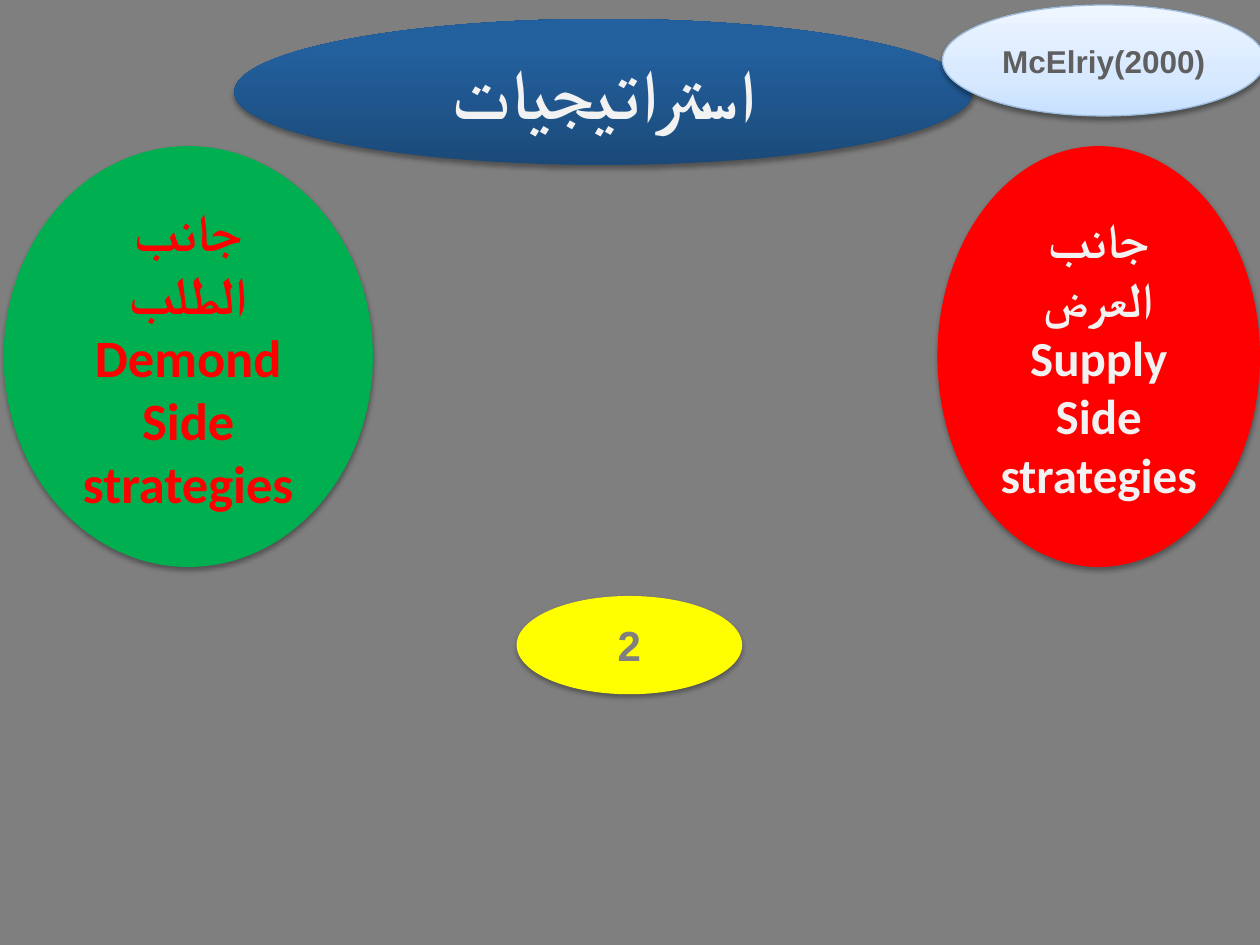
import copy
import dataclasses

import lxml.etree
import pptx
import pptx.dml.color
import pptx.enum.shapes
import pptx.enum.text
import pptx.oxml.ns
import pptx.util

Inches = pptx.util.Inches
Pt = pptx.util.Pt
qn = pptx.oxml.ns.qn


def rgb(value):
    return pptx.dml.color.RGBColor.from_string(value)


@dataclasses.dataclass(frozen=True)
class Theme:
    background: str = "7F7F7F"
    light: str = "F2F2F2"
    supply: str = "FF0000"
    demand: str = "00B050"
    number: str = "FFFF00"
    citation_text: str = "5F5F5F"
    citation_line: str = "9DBCDC"
    title_gradient: tuple = ((0, "1B4A79"), (0.8, "23609E"), (1, "2160A1"))
    citation_gradient: tuple = ((0, "C8E1FF"), (0.35, "D7E9FF"), (1, "EFF6FF"))
    main_font: str = "Arial"
    latin_font: str = "Calibri"
    title_size: int = 40
    demand_size: int = 30
    supply_size: int = 28
    number_size: int = 24
    citation_size: int = 18


class SlideBuilder:
    def __init__(self, presentation, theme):
        self.theme = theme
        self.slide = presentation.slides.add_slide(presentation.slide_layouts[5])
        self.slide.background.fill.solid()
        self.slide.background.fill.fore_color.rgb = rgb(theme.background)

    def ellipse(self, box, fill, line=None, shadow_alpha=35):
        """Add a shadowed ellipse; fill is one colour or a tuple of gradient stops."""
        oval = self.slide.shapes.add_shape(
            pptx.enum.shapes.MSO_SHAPE.OVAL, *map(Inches, box))
        if isinstance(fill, str):
            oval.fill.solid()
            oval.fill.fore_color.rgb = rgb(fill)
        else:
            self.gradient(oval, fill)
        if line:
            oval.line.color.rgb = rgb(line)
            oval.line.width = Pt(0.75)
        else:
            oval.line.fill.background()
        self.shadow(oval, shadow_alpha)
        return oval

    def gradient(self, oval, stops):
        """Fill from bottom to top with any number of stops."""
        oval.fill.gradient()
        oval.fill.gradient_angle = 90
        stop_list = oval.element.spPr.find(".//" + qn("a:gsLst"))
        while len(stop_list) < len(stops):
            stop_list.append(copy.deepcopy(stop_list[0]))
        for stop, (position, color) in zip(oval.fill.gradient_stops, stops):
            stop.position = position
            stop.color.rgb = rgb(color)

    def shadow(self, oval, alpha):
        oval.shadow.inherit = False
        effects = oval.element.spPr.find(qn("a:effectLst"))
        outer = lxml.etree.SubElement(
            effects, qn("a:outerShdw"), blurRad=str(Pt(3.1)), dist=str(Pt(1.8)),
            dir="5400000", rotWithShape="0")
        color = lxml.etree.SubElement(outer, qn("a:srgbClr"), val="000000")
        lxml.etree.SubElement(color, qn("a:alpha"), val=str(alpha * 1000))

    def text(self, shape, lines, size, color):
        """Write centred bold paragraphs from (words, font name) pairs."""
        frame = shape.text_frame
        frame.word_wrap = True
        frame.auto_size = pptx.enum.text.MSO_AUTO_SIZE.NONE
        frame.vertical_anchor = pptx.enum.text.MSO_ANCHOR.MIDDLE
        frame.text = "\n".join(words for words, _ in lines)
        for paragraph, (_, font_name) in zip(frame.paragraphs, lines):
            paragraph.alignment = pptx.enum.text.PP_ALIGN.CENTER
            paragraph.font.name = font_name
            paragraph.font.size = Pt(size)
            paragraph.font.bold = True
            paragraph.font.color.rgb = rgb(color)

    def title(self, words, box):
        """Set the title placeholder on top of a gradient ellipse."""
        self.ellipse(box, self.theme.title_gradient)
        heading = self.slide.shapes.title
        heading.left, heading.top, heading.width, heading.height = map(Inches, box)
        self.slide.shapes.element.append(heading.element)
        self.text(heading, [(words, self.theme.main_font)],
                  self.theme.title_size, self.theme.light)


def main():
    presentation = pptx.Presentation()
    presentation.slide_width = Inches(10)
    presentation.slide_height = Inches(7.5)
    theme = Theme()
    builder = SlideBuilder(presentation, theme)

    supply = builder.ellipse((7.44, 1.16, 2.56, 3.34), theme.supply)
    builder.text(supply, [("جانب العرض", theme.main_font),
                          ("Supply Side strategies", theme.latin_font)],
                 theme.supply_size, theme.light)

    demand = builder.ellipse((0.03, 1.16, 2.93, 3.34), theme.demand)
    builder.text(demand, [("جانب الطلب", theme.latin_font),
                          ("Demond Side strategies", theme.latin_font)],
                 theme.demand_size, theme.supply)

    builder.title("استراتيجيات", (1.86, 0.15, 5.86, 1.16))

    number = builder.ellipse((4.1, 4.73, 1.79, 0.78), theme.number)
    builder.text(number, [("2", theme.main_font)],
                 theme.number_size, theme.background)

    citation = builder.ellipse((7.48, 0.04, 2.56, 0.88), theme.citation_gradient,
                               line=theme.citation_line, shadow_alpha=38)
    builder.text(citation, [("McElriy(2000)", theme.main_font)],
                 theme.citation_size, theme.citation_text)

    presentation.save("out.pptx")


if __name__ == "__main__":
    main()
